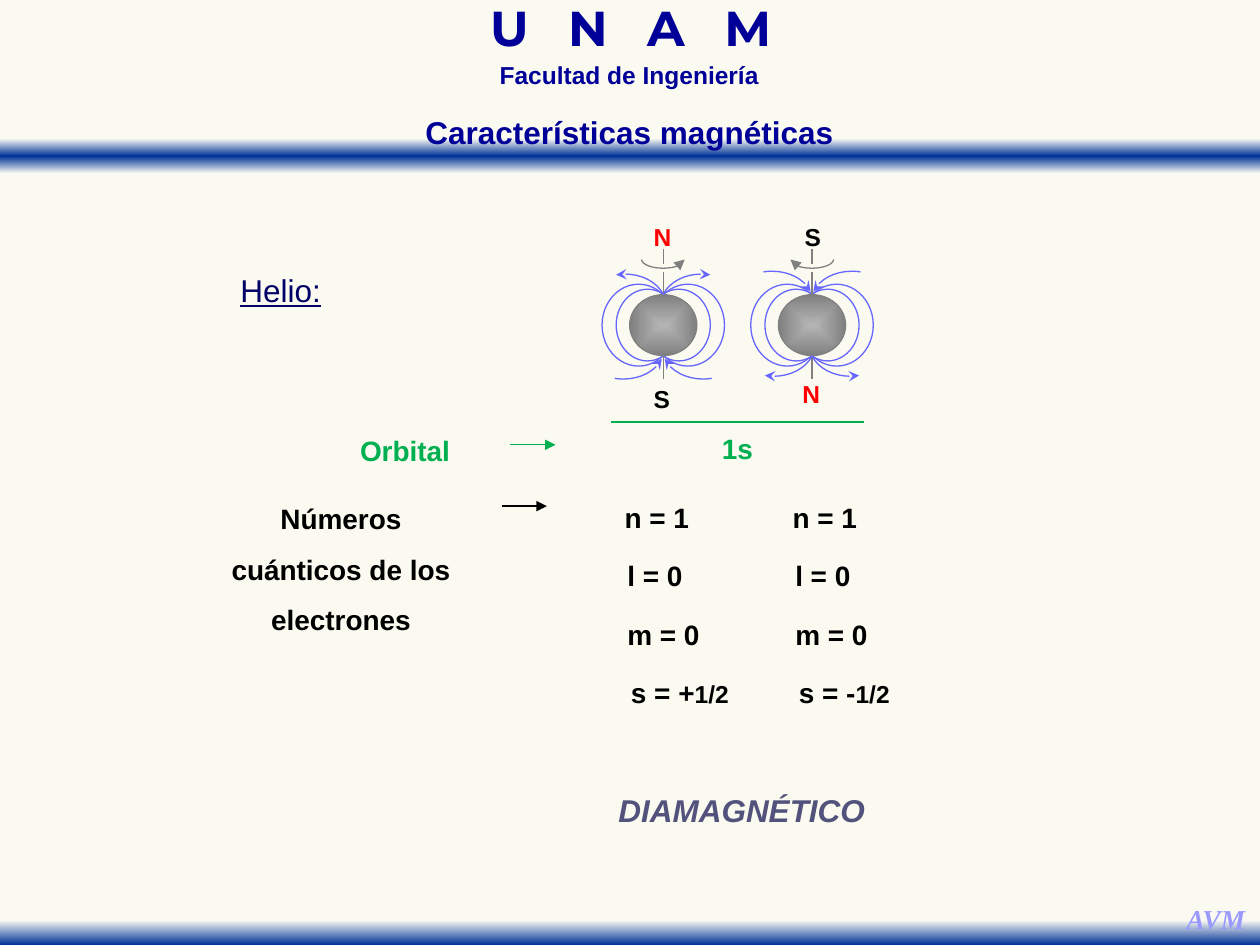
"""Slide on the magnetic character of helium, with two opposed electron spins."""
from lxml.etree import SubElement
from pptx import Presentation
from pptx.dml.color import RGBColor
from pptx.enum.shapes import MSO_CONNECTOR as LINK, MSO_SHAPE as FORM
from pptx.enum.text import PP_ALIGN as ALIGN
from pptx.oxml import parse_xml
from pptx.oxml.ns import nsdecls, qn
from pptx.util import Pt

CREAM = RGBColor(0xFA, 0xFA, 0xF0)
PALE = RGBColor(0xFA, 0xFA, 0xF2)
BLUE = RGBColor(0x00, 0x33, 0x99)
NAVY = RGBColor(0x00, 0x00, 0x99)
DARK = RGBColor(0x00, 0x00, 0x66)
LILAC = RGBColor(0x99, 0x99, 0xFF)
FIELD = RGBColor(0x66, 0x66, 0xFF)
GREY = RGBColor(0x80, 0x80, 0x80)
SILVER = RGBColor(0xB4, 0xB4, 0xB4)
GREEN = RGBColor(0x00, 0xB0, 0x50)
RED = RGBColor(0xFF, 0x00, 0x00)
BLACK = RGBColor(0x00, 0x00, 0x00)
SLATE = RGBColor(0x52, 0x52, 0x7C)

deck = Presentation()
deck.slide_width, deck.slide_height = Pt(720), Pt(540)
slide = deck.slides.add_slide(deck.slide_layouts[6])
slide.background.fill.solid()
slide.background.fill.fore_color.rgb = CREAM
shapes = slide.shapes


def stroke(shape, color, end=None, kind="triangle"):
    shape.line.color.rgb = color
    shape.line.width = Pt(0.75)
    props = shape.element.spPr
    if end:
        SubElement(props.find(qn("a:ln")), qn(end), type=kind)
    SubElement(props, qn("a:effectLst"))


def label(texts, box, size, color, space=1.0, align=ALIGN.JUSTIFY, face="Arial"):
    frame = shapes.add_textbox(*map(Pt, box)).text_frame
    frame.word_wrap = True
    para = frame.paragraphs[0]
    para.alignment, para.line_spacing = align, space
    for text in texts:
        para.add_run().text = text
    font = para.font
    font.name, font.size, font.bold = face, Pt(size), True
    font.color.rgb = color
    return para


MID = 185.8
ATOMS = [(379, 1), (464, -1)]
RINGS = [(14.1, 41.8, 46.8), (9, 35.8, 41)]

for x, pole in ATOMS:
    for shift, wide, high in RINGS:
        for side in (1, -1):
            ring = shapes.add_shape(
                FORM.OVAL, Pt(x + side * shift - wide / 2), Pt(MID - high / 2), Pt(wide), Pt(high))
            ring.fill.background()
            stroke(ring, FIELD)

DOWN = '<a:lin ang="5400000" scaled="0"/>'
ROUND = '<a:path path="shape"><a:fillToRect l="50000" t="50000" r="50000" b="50000"/></a:path>'
SHADED = [
    (FORM.RECTANGLE, (0, 79.2, 720, 20), [(0, PALE), (50, BLUE), (100, PALE)], DOWN),
    (FORM.RECTANGLE, (0, 520.3, 720, 19.7), [(28, PALE), (100, BLUE)], DOWN),
]
SHADED += [(FORM.OVAL, (x - 19.2, MID - 17.4, 38.4, 34.8), [(0, SILVER), (100, GREY)], ROUND)
           for x, pole in ATOMS]
for form, box, stops, way in SHADED:
    shape = shapes.add_shape(form, *map(Pt, box))
    shape.fill.background()
    marks = "".join(f'<a:gs pos="{at * 1000}"><a:srgbClr val="{tone}"/></a:gs>' for at, tone in stops)
    props = shape.element.spPr
    props.replace(props.find(qn("a:noFill")), parse_xml(
        f'<a:gradFill {nsdecls("a")} rotWithShape="1"><a:gsLst>{marks}</a:gsLst>{way}</a:gradFill>'))
    if form == FORM.OVAL:
        stroke(shape, GREY)
    else:
        shape.line.fill.background()
        shape.shadow.inherit = False

LINES = [
    (291.6, 254.2, 317.5, 254.2, GREEN, "a:tailEnd"),
    (349.2, 241.2, 494, 241.2, GREEN, None),
    (286.6, 289.2, 312.5, 289.2, BLACK, "a:tailEnd"),
]
LINES += [(x, MID + top, x, MID + low, GREY, None)
          for x, pole in ATOMS for top, low in [(17.6, 30.8), (-17.6, -30.4), (-34.8, -43.4)]]
for *ends, color, tip in LINES:
    stroke(shapes.add_connector(LINK.STRAIGHT, *map(Pt, ends)), color, tip)

for x, pole in ATOMS:
    arc = [[(12.3, -37.5), (12.3, -34.7), (6.8, -32.5), (0, -32.5)],
           [(0, -32.5), (-6.8, -32.5), (-12.3, -34.7), (-12.3, -37.5)]]
    curves = [([[(pole * a, b) for a, b in part] for part in arc], GREY, "a:headEnd", "triangle")]
    for end, gap, start, tip in [(-pole, 0, 17.6, "a:tailEnd"), (pole, 0.8, 19.2, "a:headEnd")]:
        for side in (1, -1):
            bend = [[(0, 0), (3.6, 7.2), (12.4, 11.6), (21.8, 11.6)],
                    [(21.8, 11.6), (23.5, 11.6), (25.3, 11.5), (26.9, 11.2)]]
            path = [[(side * (gap + a), end * (start + b)) for a, b in part] for part in bend]
            curves.append((path, FIELD, tip, "stealth"))
    for path, color, tip, kind in curves:
        dots = []
        for part in path:
            for t in [step / 8 for step in range(9)]:
                mix = [(1 - t) ** 3, 3 * t * (1 - t) ** 2, 3 * t * t * (1 - t), t ** 3]
                dx, dy = (sum(m * c for m, c in zip(mix, axis)) for axis in zip(*part))
                dots.append((Pt(x + dx), Pt(MID + dy)))
        pen = shapes.build_freeform(*dots[0], scale=1.0)
        pen.add_line_segments(dots[1:], close=False)
        curve = pen.convert_to_shape()
        curve.fill.background()
        stroke(curve, color, tip, kind)

POLES = [("N", 366.5, 123.1, RED), ("S", 366.5, 216, BLACK),
         ("N", 451.4, 213.1, RED), ("S", 452.7, 123.1, BLACK)]
for text, x, y, color in POLES:
    label([text], (x, y, 25, 23.8), 14, color)

logo = label(["U N A ", "M"], (219.6, 4.3, 281.5, 31), 28, NAVY, 0.7, ALIGN.CENTER, "Montserrat")
logo.runs[0].font.element.set("spc", "735") if hasattr(logo.runs[0].font, "element") else \
    logo.runs[0]._r.get_or_add_rPr().set("spc", "735")
label(["Facultad de Ingeniería"], (231.1, 35.3, 257, 19.4), 14, NAVY, 0.7, ALIGN.CENTER)
label(["Características magnéticas"], (203.8, 67, 311.8, 23), 18, NAVY, 0.7, ALIGN.CENTER)
sign = label(["AVM"], (670.3, 517, 49, 26.6), 15.6, LILAC, 0.7, ALIGN.CENTER, "Times New Roman")
sign.font.italic = True

name = label(["Helio:"], (130.3, 140.4, 67, 39.6), 18, DARK, 1.5)
name.font.bold, name.font.underline = False, True
label(["Orbital"], (198.7, 234.7, 83.5, 36.7), 16, GREEN, 1.5)
label(["1s"], (405.4, 233.3, 35.3, 36.7), 16, GREEN, 1.5)
label(["Números cuánticos de los electrones"], (121, 273.6, 147.6, 94.3), 16, BLACK, 1.5, ALIGN.CENTER)

ROWS = [(349.9, "n = 1"), (351.4, "l = 0"), (351.4, "m = 0"), (353.5, "s = ")]
for col, spin in enumerate("+-"):
    for row, (x, text) in enumerate(ROWS):
        texts = [text + spin, "1/2"] if row == 3 else [text]
        para = label(texts, (x + 96 * col, 272.9 + 33.3 * row, 86.4, 36.7), 16, BLACK, 1.5)
        for run in para.runs[1:]:
            run.font.size = Pt(14)

result = label(["DIAMAGNÉTICO"], (346.3, 437.8, 177.8, 39.6), 18, SLATE, 1.5)
result.font.italic = True
deck.save("out.pptx")
